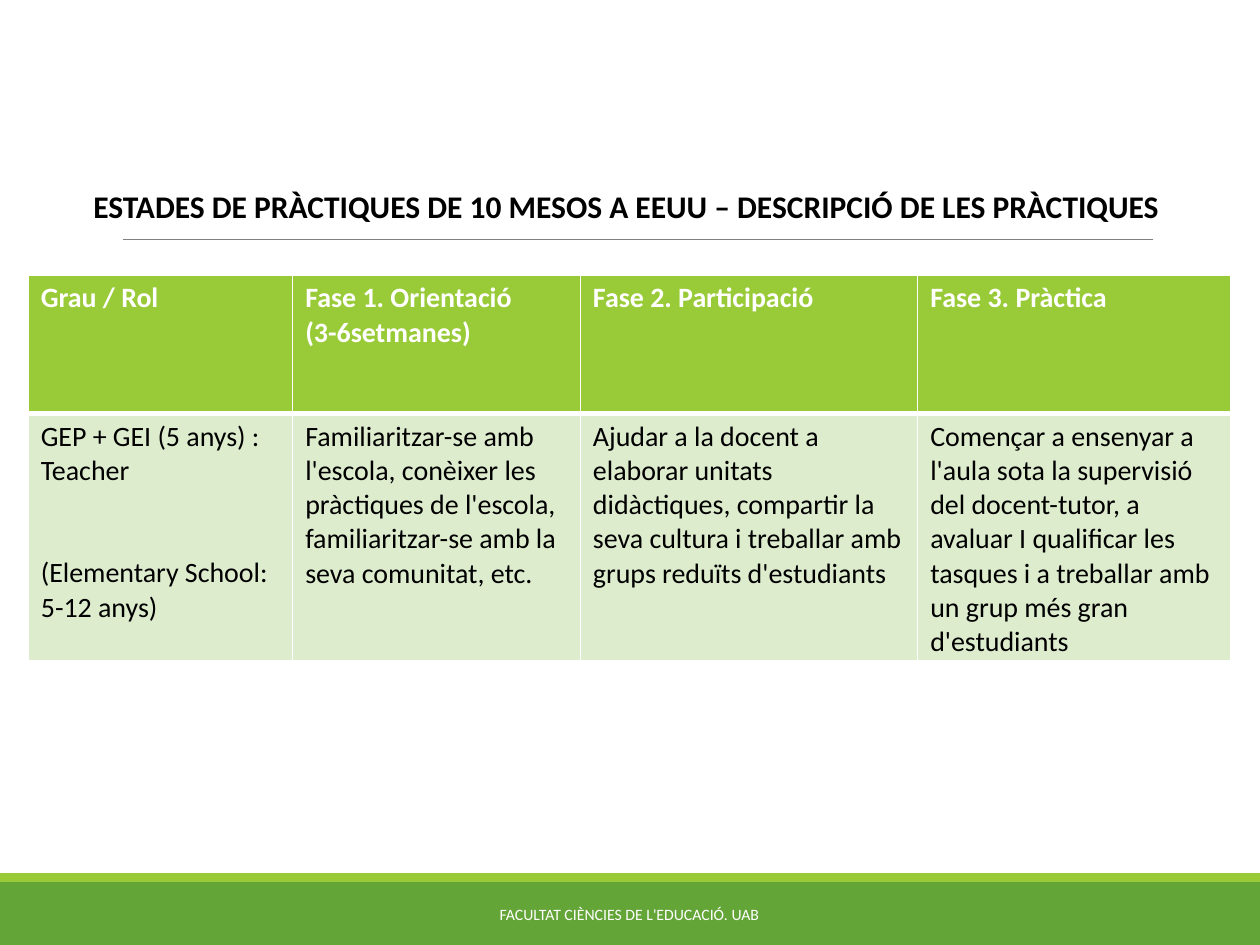
from lxml.etree import SubElement
from pptx import Presentation
from pptx.dml.color import RGBColor
from pptx.enum.shapes import MSO_CONNECTOR, MSO_SHAPE
from pptx.enum.text import MSO_ANCHOR, MSO_AUTO_SIZE, PP_ALIGN
from pptx.oxml.ns import qn
from pptx.util import Cm, Pt

GREEN = RGBColor(0x63, 0xA5, 0x37)
LIME = RGBColor(0x99, 0xCB, 0x38)
PALE = RGBColor(0xDE, 0xEC, 0xCE)
GRAY = RGBColor(0x80, 0x80, 0x80)
WHITE = RGBColor(0xFF, 0xFF, 0xFF)
BLACK = RGBColor(0, 0, 0)

WIDE, HIGH = 25.4, 19.05
COLS = (5.33, 5.8, 6.8, 6.32)
ROWS = (2.79, 4.98)
HEADS = (
    ("Grau / Rol",),
    ("Fase 1. Orientació", "(3-6setmanes)"),
    ("Fase 2. Participació",),
    ("Fase 3. Pràctica",),
)
TASKS = (
    ("GEP + GEI (5 anys) : Teacher", "(Elementary School: \n5-12 anys)"),
    ("Familiaritzar-se amb l'escola, conèixer les pràctiques de l'escola, "
     "familiaritzar-se amb la seva comunitat, etc.",),
    ("Ajudar a la docent a elaborar unitats didàctiques, compartir la seva "
     "cultura i treballar amb grups reduïts d'estudiants",),
    ("Començar a ensenyar a l'aula sota la supervisió del docent-tutor, a "
     "avaluar I qualificar les tasques i a treballar amb un grup més gran "
     "d'estudiants",),
)


def add_text(para, text, size, color, bold=False):
    for i, line in enumerate(text.split("\n")):
        if i:
            para.add_line_break()
        run = para.add_run()
        run.text = line
        font = run.font
        font.name, font.size, font.bold = "Calibri", Pt(size), bold
        font.color.rgb = color


def add_bar(slide, top, high, color):
    bar = slide.shapes.add_shape(
        MSO_SHAPE.RECTANGLE, 0, Cm(top), Cm(WIDE), Cm(high))
    bar.shadow.inherit = False
    bar.fill.solid()
    bar.fill.fore_color.rgb = color
    bar.line.fill.background()


def add_rule(slide, left, right, top):
    rule = slide.shapes.add_connector(
        MSO_CONNECTOR.STRAIGHT, Cm(left), Cm(top), Cm(right), Cm(top))
    rule.line.color.rgb = GRAY
    rule.line.width = Pt(0.5)
    SubElement(rule.line._get_or_add_ln().getparent(), qn("a:effectLst"))


def fill_body(slide, text):
    body = slide.placeholders[1]
    body.left, body.top = Cm(1.63), Cm(3.73)
    body.width, body.height = Cm(22.15), Cm(13.79)
    frame = body.text_frame
    frame.auto_size = MSO_AUTO_SIZE.NONE
    frame.margin_left = frame.margin_right = 0
    para = frame.paragraphs[0]
    para.line_spacing = 0.9
    para.space_before, para.space_after = Pt(12), Pt(2)
    props = para._p.get_or_add_pPr()
    props.set("marL", str(Cm(0.25)))
    props.set("indent", "0")
    SubElement(props, qn("a:buNone"))
    add_text(para, text, 18, BLACK, True)


def add_foot(slide, text):
    box = slide.shapes.add_textbox(Cm(7.67), Cm(17.93), Cm(10.03), Cm(1.02))
    frame = box.text_frame
    frame.word_wrap = True
    frame.vertical_anchor = MSO_ANCHOR.MIDDLE
    para = frame.paragraphs[0]
    para.alignment = PP_ALIGN.CENTER
    add_text(para, text, 9, WHITE)


def add_edge(cell, side, width):
    line = SubElement(cell._tc.get_or_add_tcPr(), qn("a:ln" + side),
                      w=str(Pt(width)))
    fill = SubElement(line, qn("a:solidFill"))
    SubElement(fill, qn("a:srgbClr"), val=str(WHITE))


def fill_cell(cell, lines, head):
    edges = (("L", 1), ("R", 1), ("T", 1 if head else 3), ("B", 3 if head else 1))
    for side, width in edges:
        add_edge(cell, side, width)
    cell.fill.solid()
    cell.fill.fore_color.rgb = LIME if head else PALE
    frame = cell.text_frame
    for i, line in enumerate(lines):
        para = frame.add_paragraph() if i else frame.paragraphs[0]
        if i and not head:
            para.space_before = Pt(39)
        add_text(para, line, 16, WHITE if head else BLACK, head)


def add_grid(slide):
    grid = slide.shapes.add_table(
        len(ROWS), len(COLS), Cm(0.57), Cm(5.54),
        Cm(sum(COLS)), Cm(sum(ROWS))).table
    grid.horz_banding = False
    for col, wide in zip(grid.columns, COLS):
        col.width = Cm(wide)
    for row, high in zip(grid.rows, ROWS):
        row.height = Cm(high)
    for r, cells in enumerate((HEADS, TASKS)):
        for c, lines in enumerate(cells):
            fill_cell(grid.cell(r, c), lines, r == 0)


def main():
    deck = Presentation()
    deck.slide_width, deck.slide_height = Cm(WIDE), Cm(HIGH)
    slide = deck.slides.add_slide(deck.slide_layouts[1])
    title = slide.shapes.title.element
    title.getparent().remove(title)
    add_bar(slide, 17.78, 1.27, GREEN)
    add_bar(slide, 17.6, 0.18, LIME)
    add_rule(slide, 2.48, 23.24, 4.83)
    fill_body(slide, "ESTADES DE PRÀCTIQUES DE 10 MESOS A EEUU – "
                     "DESCRIPCIÓ DE LES PRÀCTIQUES")
    add_foot(slide, "FACULTAT CIÈNCIES DE L'EDUCACIÓ. UAB")
    add_grid(slide)
    deck.save("out.pptx")


if __name__ == "__main__":
    main()
